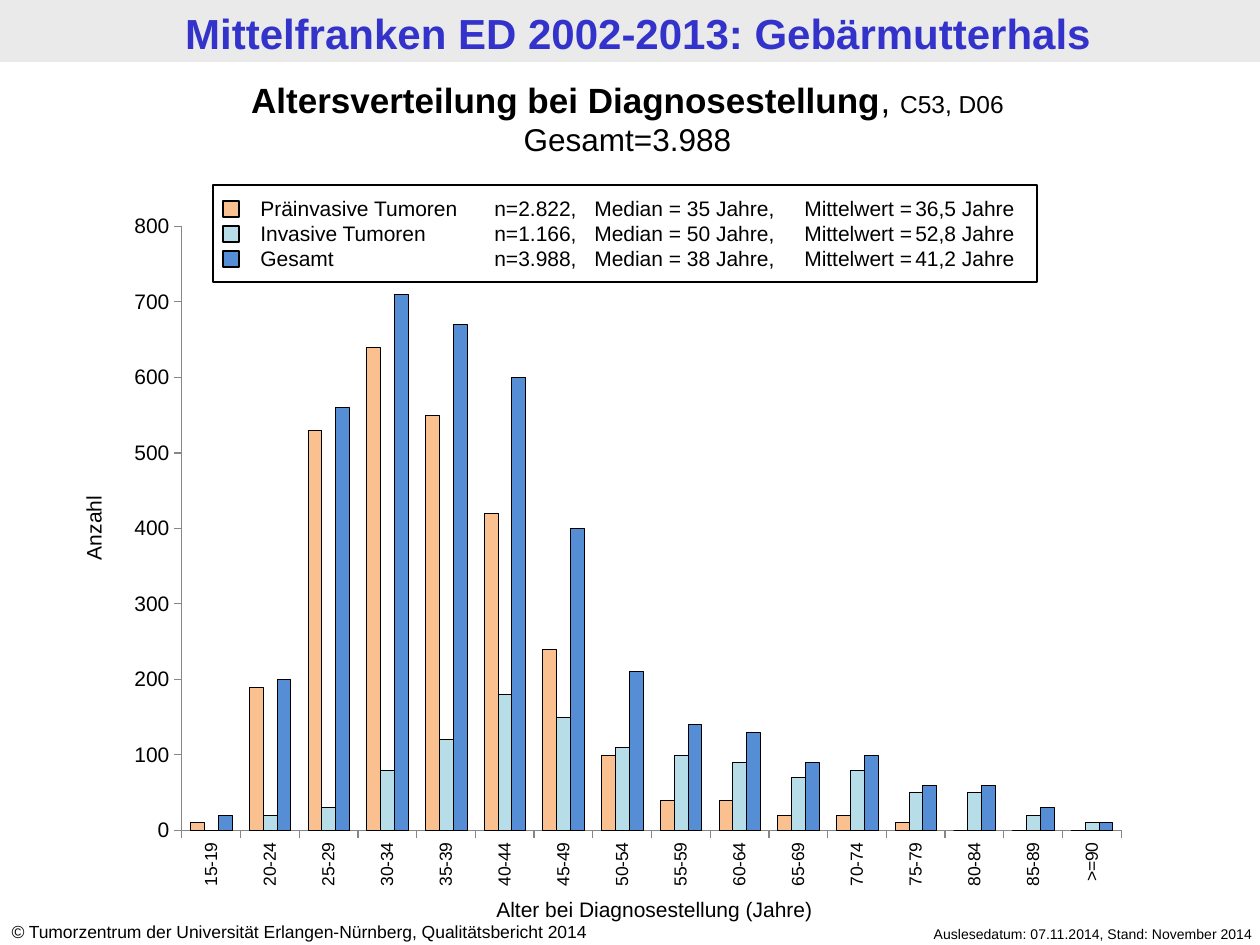
from lxml.etree import SubElement
from pptx import Presentation
from pptx.chart.data import CategoryChartData
from pptx.dml.color import RGBColor
from pptx.enum.chart import XL_CHART_TYPE as ChartType, XL_TICK_MARK as TickMark
from pptx.enum.shapes import MSO_SHAPE as Preset
from pptx.enum.text import MSO_ANCHOR as Anchor, MSO_AUTO_SIZE as AutoSize, PP_ALIGN as Align
from pptx.oxml import parse_xml
from pptx.oxml.ns import nsdecls, qn
from pptx.util import Emu, Pt

EMU_PER_PX = 914400 / 126
FONT = "Arial"
COLORS = {
    "band": "EAEAEA", "heading": "3333CC", "text": "000000", "axis": "868686",
    "plot": "FFFFFF", "preinvasive": "FAC090", "invasive": "B7DEE8", "total": "558ED5",
}
AGE_GROUPS = [f"{age}-{age + 4}" for age in range(15, 90, 5)] + [">=90"]
# colour key, name, cases, median, mean, cases per age group
TUMOR_GROUPS = [
    ("preinvasive", "Präinvasive Tumoren", "2.822", "35", "36,5",
     [10, 190, 530, 640, 550, 420, 240, 100, 40, 40, 20, 20, 10, 0, 0, 0]),
    ("invasive", "Invasive Tumoren", "1.166", "50", "52,8",
     [0, 20, 30, 80, 120, 180, 150, 110, 100, 90, 70, 80, 50, 50, 20, 10]),
    ("total", "Gesamt", "3.988", "38", "41,2",
     [20, 200, 560, 710, 670, 600, 400, 210, 140, 130, 90, 100, 60, 60, 30, 10]),
]
LEGEND_TABS = [(234, "l"), (310, "r"), (334, "l"), (544, "l"), (655, "l")]


def px(length):
    return Emu(round(length * EMU_PER_PX))


def rgb(name):
    return RGBColor.from_string(COLORS[name])


def style_font(font, size, color="text", bold=False):
    font.name, font.size, font.bold = FONT, Pt(size), bold
    font.color.rgb = rgb(color)


def style_line(line, width, color="text"):
    line.color.rgb = rgb(color)
    line.width = Pt(width)


def add_tabs(paragraph, stops):
    tab_list = SubElement(paragraph._p.get_or_add_pPr(), qn("a:tabLst"))
    for position, alignment in stops:
        SubElement(tab_list, qn("a:tab"), pos=str(px(position)), algn=alignment)


def add_text(slide, box, lines, size, align=Align.LEFT, rotation=0, tabs=()):
    """Each line is a list of (text, font overrides) runs."""
    textbox = slide.shapes.add_textbox(*map(px, box))
    textbox.rotation = rotation
    frame = textbox.text_frame
    frame.word_wrap = True
    frame.auto_size = AutoSize.SHAPE_TO_FIT_TEXT
    for index, runs in enumerate(lines):
        paragraph = frame.add_paragraph() if index else frame.paragraphs[0]
        paragraph.alignment = align
        if tabs:
            add_tabs(paragraph, tabs)
        style_font(paragraph.font, size)
        for text, overrides in runs:
            run = paragraph.add_run()
            run.text = text
            for attribute, value in overrides.items():
                setattr(run.font, attribute, value)


def add_rect(slide, box, fill=None, outlined=True):
    rect = slide.shapes.add_shape(Preset.RECTANGLE, *map(px, box))
    rect.shadow.inherit = False
    if fill:
        rect.fill.solid()
        rect.fill.fore_color.rgb = rgb(fill)
    else:
        rect.fill.background()
    if outlined:
        style_line(rect.line, 0.75)
    else:
        rect.line.fill.background()


def set_heading(slide, text):
    title = slide.shapes.title
    title.left, title.top, title.width, title.height = map(px, (8, 1, 1260, 62))
    frame = title.text_frame
    frame.text = text
    frame.vertical_anchor = Anchor.TOP
    frame.auto_size = AutoSize.NONE
    heading = frame.paragraphs[0]
    heading.alignment = Align.CENTER
    style_font(heading.font, 24, "heading", bold=True)


def style_axis(axis, size):
    axis.has_major_gridlines = False
    axis.major_tick_mark = TickMark.OUTSIDE
    axis.minor_tick_mark = TickMark.NONE
    style_line(axis.format.line, 0.75, "axis")
    style_font(axis.tick_labels.font, size)


def format_plot_area(chart, x, y, w, h):
    """Fix the inner plot area, in fractions of the chart, and fill it."""
    plot_area = chart._chartSpace.chart.plotArea
    for layout in plot_area.findall(qn("c:layout")):
        plot_area.remove(layout)
    plot_area.insert(0, parse_xml(
        f'<c:layout {nsdecls("c")}><c:manualLayout><c:layoutTarget val="inner"/>'
        '<c:xMode val="edge"/><c:yMode val="edge"/>'
        f'<c:x val="{x}"/><c:y val="{y}"/><c:w val="{w}"/><c:h val="{h}"/>'
        '</c:manualLayout></c:layout>'))
    plot_area.append(parse_xml(
        f'<c:spPr {nsdecls("c", "a")}><a:solidFill><a:srgbClr val="{COLORS["plot"]}"/>'
        '</a:solidFill><a:ln><a:noFill/></a:ln></c:spPr>'))


def add_age_chart(slide, box):
    data = CategoryChartData()
    data.categories = AGE_GROUPS
    for _, name, *_, counts in TUMOR_GROUPS:
        data.add_series(name, counts)
    chart = slide.shapes.add_chart(ChartType.COLUMN_CLUSTERED, *map(px, box), data).chart
    chart.has_legend = chart.has_title = False
    style_font(chart.font, 18)
    chart.font.name = "Calibri"

    bars = chart.plots[0]
    bars.gap_width, bars.overlap, bars.vary_by_categories = 124, 0, False
    for series, (color, *_) in zip(bars.series, TUMOR_GROUPS):
        series.format.fill.solid()
        series.format.fill.fore_color.rgb = rgb(color)
        style_line(series.format.line, 0.25)

    ages, counts = chart.category_axis, chart.value_axis
    style_axis(ages, 10)
    style_axis(counts, 12)
    ages.tick_labels.font._element.getparent().getparent().getparent().find(
        qn("a:bodyPr")).set("rot", "-5400000")
    counts.minimum_scale, counts.maximum_scale, counts.major_unit = 0, 800, 100
    format_plot_area(chart, 0.065, 0.035, 0.914, 0.864)


def add_legend(slide):
    rows = [[(f"{name}\tn=\t{cases},\tMedian = {median} Jahre,\tMittelwert =\t{mean} Jahre", {})]
            for _, name, cases, median, mean, _ in TUMOR_GROUPS]
    add_text(slide, (248, 189, 809, 89), rows, 12, tabs=LEGEND_TABS)
    add_rect(slide, (213, 185, 824, 97))
    for index, (color, *_) in enumerate(TUMOR_GROUPS):
        add_rect(slide, (223, 201 + 25 * index, 16, 16), color)


def main():
    presentation = Presentation()
    presentation.slide_width, presentation.slide_height = px(1260), px(945)
    slide = presentation.slides.add_slide(presentation.slide_layouts[5])

    add_rect(slide, (0, 0, 1260, 62), "band", outlined=False)
    title = slide.shapes.title._element
    title.getparent().append(title)  # in front of the band
    set_heading(slide, "Mittelfranken ED 2002-2013: Gebärmutterhals")
    add_text(slide, (838, 919, 427, 30),
             [[("Auslesedatum: 07.11.2014, Stand: November 2014", {})]], 8, Align.RIGHT)
    add_text(slide, (-1, 915, 660, 34),
             [[("©", {"italic": True}),
               (" Tumorzentrum der Universität Erlangen-Nürnberg, Qualitätsbericht 2014", {})]], 10)
    add_text(slide, (-5, 72, 1265, 93),
             [[("Altersverteilung bei Diagnosestellung", {"bold": True, "size": Pt(20)}),
               (", ", {"size": Pt(20)}), ("C53, D06", {"size": Pt(14)})],
              [("Gesamt=3.988", {})]], 18, Align.CENTER)
    add_age_chart(slide, (115, 202, 1028, 699))
    add_text(slide, (461, 890, 387, 38),
             [[("Alter bei Diagnosestellung (Jahre)", {})]], 12, Align.CENTER)
    add_text(slide, (-71, 509, 329, 38), [[("Anzahl", {})]], 12, Align.CENTER, rotation=270)
    add_legend(slide)
    presentation.save("out.pptx")


if __name__ == "__main__":
    main()
